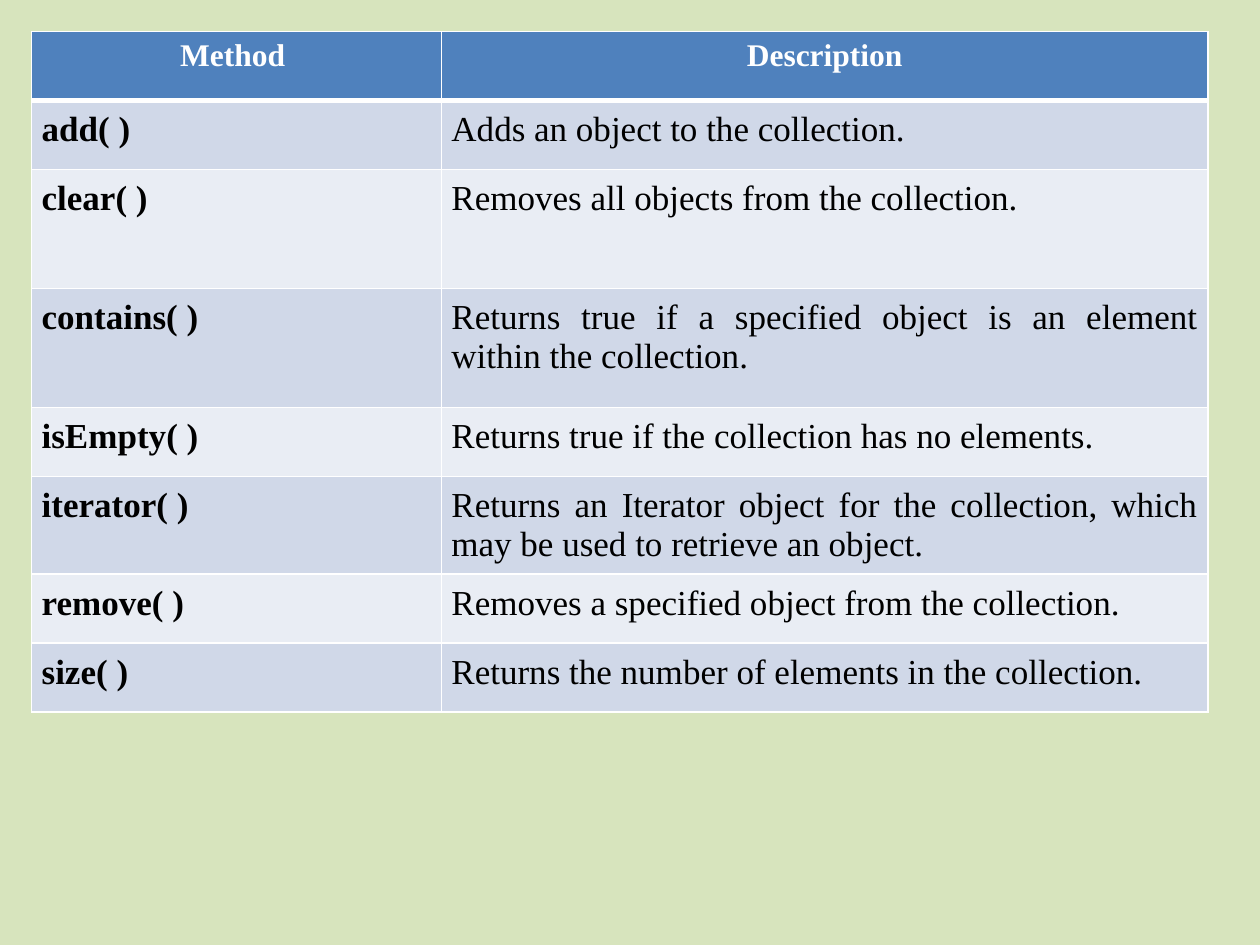
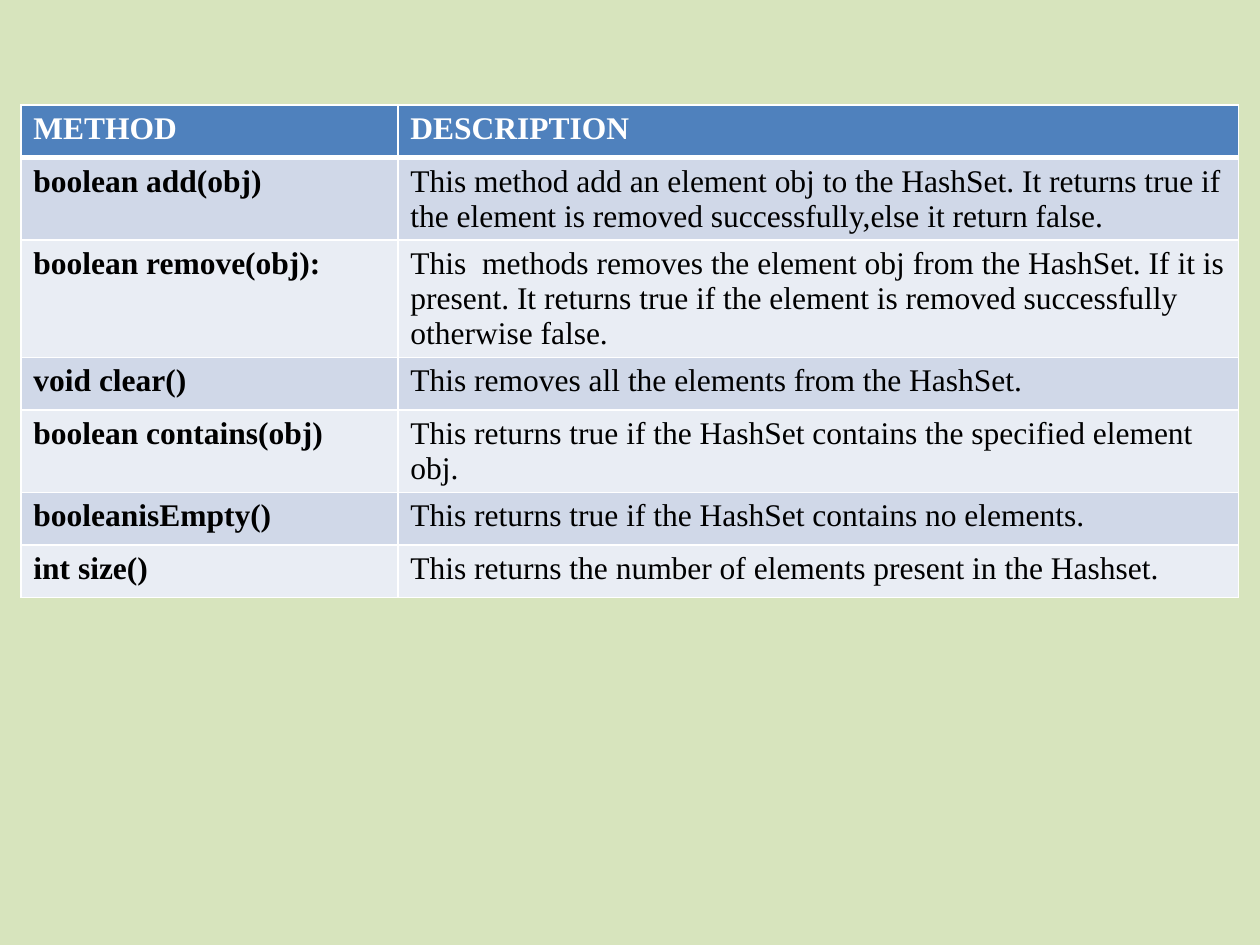
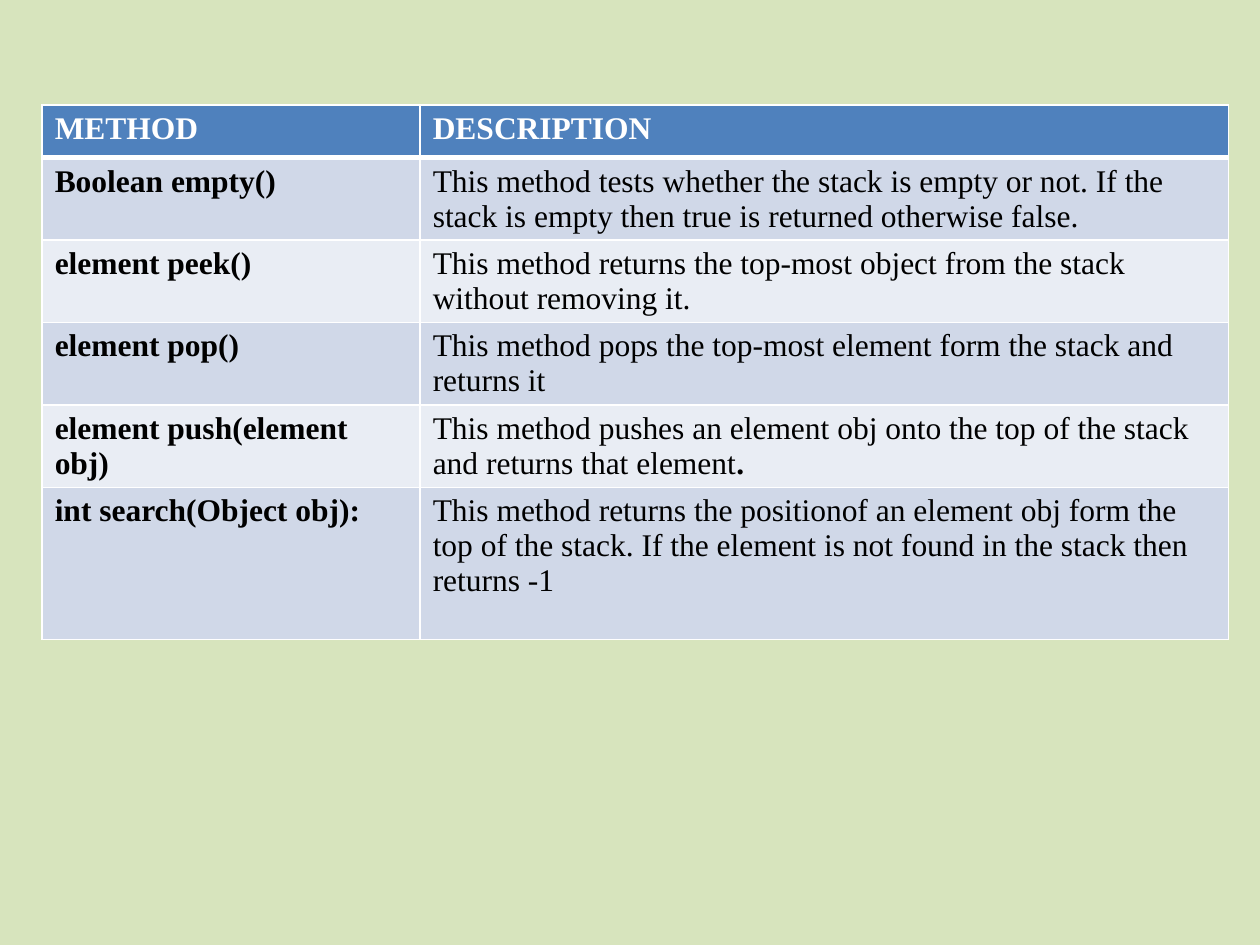
from lxml.etree import SubElement
from pptx import Presentation
from pptx.dml.color import RGBColor
from pptx.enum.text import PP_ALIGN
from pptx.oxml.ns import qn
from pptx.util import Cm, Pt

FONT = "Times New Roman"
PAGE = RGBColor(0xD7, 0xE4, 0xBD)
HEAD = RGBColor(0x4F, 0x81, 0xBD)
DARK = RGBColor(0xD0, 0xD8, 0xE8)
PALE = RGBColor(0xE9, 0xED, 0xF4)
WHITE = RGBColor(0xFF, 0xFF, 0xFF)
BLACK = RGBColor(0, 0, 0)

COMMON = [
    ("add( )", "Adds an object to the collection."),
    ("clear( )", "Removes all objects from the collection."),
    ("contains( )", "Returns true if a specified object is an element within the collection."),
    ("isEmpty( )", "Returns true if the collection has no elements."),
    ("iterator( )", "Returns an Iterator object for the collection, which may be used to "
                    "retrieve an object."),
    ("remove( )", "Removes a specified object from the collection."),
    ("size( )", "Returns the number of elements in the collection."),
]
HASH = [
    ("boolean add(obj)", "This method add an element obj to the HashSet. It returns true if "
                         "the element is removed successfully,else it return false."),
    ("boolean remove(obj):", "This  methods removes the element obj from the HashSet. If it is "
                             "present. It returns true if the element is removed successfully "
                             "otherwise false."),
    ("void clear()", "This removes all the elements from the HashSet."),
    ("boolean contains(obj)", "This returns true if the HashSet contains the specified element obj."),
    ("booleanisEmpty()", "This returns true if the HashSet contains no elements."),
    ("int size()", "This returns the number of elements present in the Hashset."),
]
STACK = [
    ("Boolean empty()", "This method tests whether the stack is empty or not. If the stack is "
                        "empty then true is returned otherwise false."),
    ("element peek()", "This method returns the top-most object from the stack without removing it."),
    ("element pop()", "This method pops the top-most element form the stack and returns it"),
    ("element push(element obj)", "This method pushes an element obj onto the top of the stack "
                                  "and returns that element", "."),
    ("int search(Object obj):", "This method returns the positionof an element obj form the top of "
                                "the stack. If the element is not found in the stack then returns -1"),
]


def edge(cell, side, width):
    """Draw one white border of a cell."""
    line = SubElement(cell._tc.get_or_add_tcPr(), qn(f"a:ln{side}"), w=str(Pt(width)))
    fill = SubElement(line, qn("a:solidFill"))
    SubElement(fill, qn("a:srgbClr"), val=str(WHITE))


def paint(cell, fill, top=1, base=1):
    """Give a cell its borders and fill."""
    for side, width in zip("LRTB", (1, 1, top, base)):
        edge(cell, side, width)
    cell.fill.solid()
    cell.fill.fore_color.rgb = fill


def write(cell, parts, size, color, align):
    """Write (text, bold) parts into a cell, run by run."""
    para = cell.text_frame.paragraphs[0]
    para.alignment = align
    for text, bold in parts:
        run = para.add_run()
        run.text = text
        font = run.font
        font.name, font.size, font.bold = FONT, Pt(size), bold
        font.color.rgb = color


def pad(cell, gap):
    """Set all four margins of a cell."""
    cell.margin_left = cell.margin_right = cell.margin_top = cell.margin_bottom = gap


def grid(deck, box, heads, rows, widths, highs, size=18,
         align=PP_ALIGN.LEFT, mid=PP_ALIGN.LEFT, gap=None):
    """Add a slide with a method table at the top left of its box."""
    slide = deck.slides.add_slide(deck.slide_layouts[6])
    left, top = box
    frame = slide.shapes.add_table(len(rows) + 1, 2, Cm(left), Cm(top),
                                   Cm(sum(widths)), Cm(sum(highs)))
    table = frame.table
    for col, width in zip(table.columns, widths):
        col.width = Cm(width)
    for row, high in zip(table.rows, highs):
        row.height = Cm(high)
    for col, text in enumerate(heads):
        cell = table.cell(0, col)
        paint(cell, HEAD, base=3)
        write(cell, [(text, True)], 18, WHITE, mid)
    for num, (name, text, *tail) in enumerate(rows, 1):
        parts = [(text, False)] + [(end, True) for end in tail]
        for col, runs in enumerate(([(name, True)], parts)):
            cell = table.cell(num, col)
            paint(cell, DARK if num % 2 else PALE, top=3 if num == 1 else 1)
            write(cell, runs, size, BLACK, align)
            if gap is not None:
                pad(cell, Cm(gap))


def main():
    """Build the three method tables."""
    deck = Presentation()
    deck.slide_width, deck.slide_height = Cm(25.4), Cm(19.05)
    back = deck.slide_master.background.fill
    back.solid()
    back.fore_color.rgb = PAGE
    heads = ("METHOD", "DESCRIPTION")
    grid(deck, (0.64, 0.64), ("Method ", "Description"), COMMON, (8.26, 15.45),
         [1.39] * 2 + [2.4] * 2 + [1.39] * 4, 20, PP_ALIGN.JUSTIFY, PP_ALIGN.CENTER, 0.2)
    grid(deck, (0.42, 2.12), heads, HASH, (7.6, 16.95), [1.06] * 7)
    grid(deck, (0.85, 2.12), heads, STACK, (7.62, 16.3), [1.06] * 5 + [3.07])
    deck.save("out.pptx")


if __name__ == "__main__":
    main()
